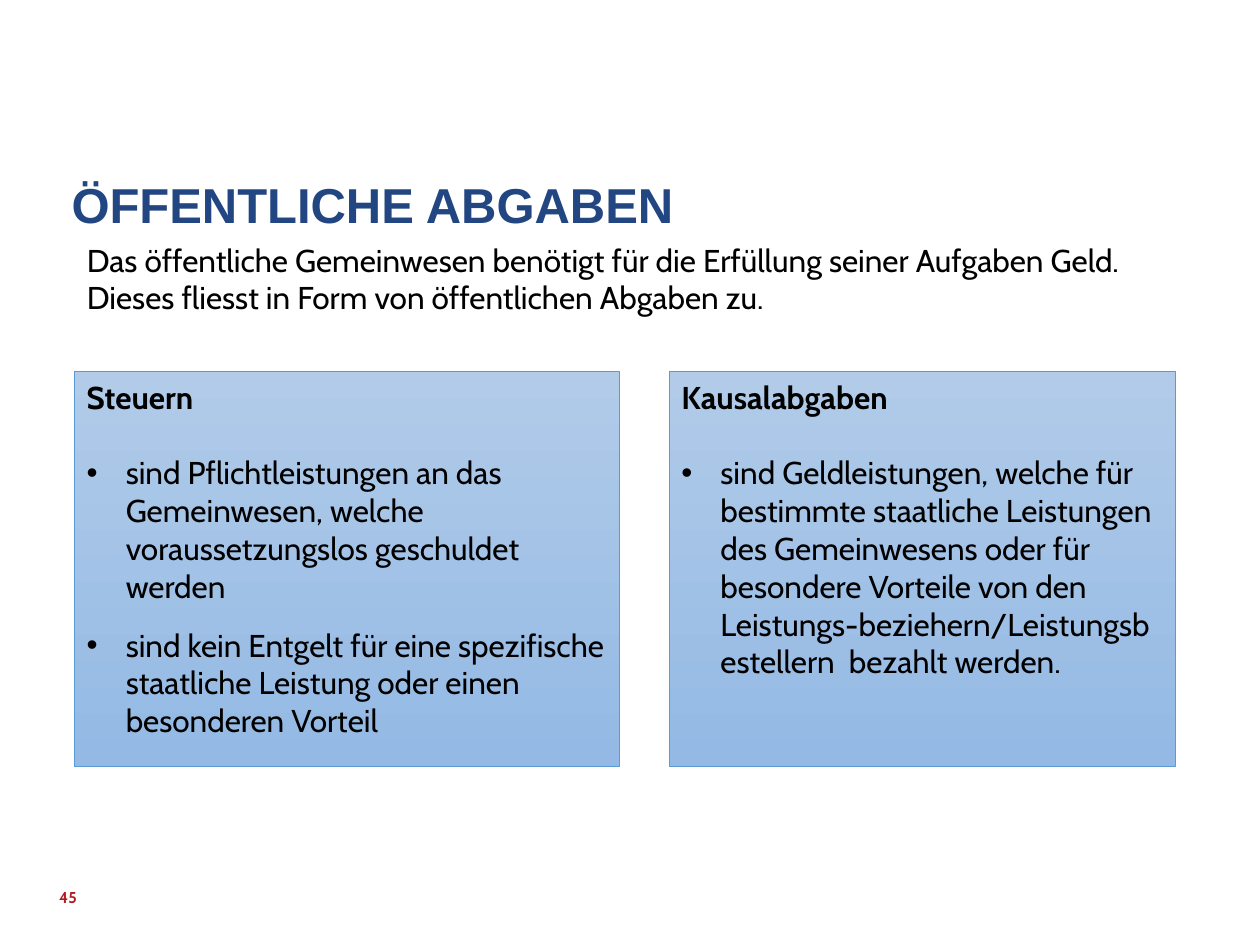
from dataclasses import dataclass

import pptx
import pptx.dml.color
import pptx.enum.shapes
import pptx.enum.text
import pptx.oxml.ns
import pptx.util
from lxml import etree

Inches = pptx.util.Inches
Pt = pptx.util.Pt

BODY_FONT = "Cabin"
BLACK = "000000"


@dataclass
class Panel:
    left: float
    width: float
    heading: str
    points: list[str]


def rgb(value: str) -> pptx.dml.color.RGBColor:
    return pptx.dml.color.RGBColor.from_string(value)


def add_run(paragraph, text: str, size: float = 18, color: str = BLACK,
            bold: bool = False, font: str = BODY_FONT) -> None:
    run = paragraph.add_run()
    run.text = text
    run.font.name = font
    run.font.size = Pt(size)
    run.font.bold = bold
    run.font.color.rgb = rgb(color)


def add_text_frame(slide, left: float, top: float, width: float, height: float):
    box = slide.shapes.add_textbox(Inches(left), Inches(top), Inches(width), Inches(height))
    box.text_frame.word_wrap = True
    return box.text_frame


def add_bullet(paragraph) -> None:
    properties = paragraph._p.get_or_add_pPr()
    properties.set("marL", str(Inches(0.31)))
    properties.set("indent", str(-Inches(0.31)))
    qn = pptx.oxml.ns.qn
    etree.SubElement(properties, qn("a:buFont"), typeface="Arial")
    etree.SubElement(properties, qn("a:buChar"), char="•")


def add_panel(slide, panel: Panel) -> None:
    box = slide.shapes.add_shape(
        pptx.enum.shapes.MSO_SHAPE.RECTANGLE,
        Inches(panel.left), Inches(2.95), Inches(panel.width), Inches(3.13))
    box.shadow.inherit = False
    box.line.color.rgb = rgb("5B9BD5")
    box.line.width = Pt(0.5)

    # Light blue at the top, darker at the bottom
    box.fill.gradient()
    box.fill.gradient_angle = 270
    for stop, color in zip(box.fill.gradient_stops, ("B1CBE9", "93B9E4")):
        stop.color.rgb = rgb(color)
        stop.position = 0 if color == "B1CBE9" else 1

    frame = box.text_frame
    frame.word_wrap = True
    frame.vertical_anchor = pptx.enum.text.MSO_ANCHOR.TOP
    heading = frame.paragraphs[0]
    heading.alignment = pptx.enum.text.PP_ALIGN.LEFT
    heading.space_after = Pt(21.6)
    add_run(heading, panel.heading, bold=True)
    for point in panel.points:
        item = frame.add_paragraph()
        item.alignment = pptx.enum.text.PP_ALIGN.LEFT
        item.space_after = Pt(12)
        add_bullet(item)
        add_run(item, point)


PANELS = [
    Panel(0.59, 4.33, "Steuern", [
        "sind Pflichtleistungen an das Gemeinwesen, welche "
        "voraussetzungslos geschuldet werden",
        "sind kein Entgelt für eine spezifische staatliche Leistung "
        "oder einen besonderen Vorteil",
    ]),
    Panel(5.31, 4.02, "Kausalabgaben", [
        "sind Geldleistungen, welche für bestimmte staatliche Leistungen "
        "des Gemeinwesens oder für besondere Vorteile von den "
        "Leistungs-beziehern/Leistungsbestellern  bezahlt werden.",
    ]),
]

INTRO = [
    "Das öffentliche Gemeinwesen benötigt für die Erfüllung seiner Aufgaben Geld.",
    "Dieses fliesst in Form von öffentlichen Abgaben zu.",
]


def main() -> None:
    deck = pptx.Presentation()
    deck.slide_width, deck.slide_height = Inches(10), Inches(7.5)
    slide = deck.slides.add_slide(deck.slide_layouts[6])

    # Title
    title = add_text_frame(slide, 0.47, 1.39, 7.64, 0.94).paragraphs[0]
    title.line_spacing = 0.9
    add_run(title, "ÖFFENTLICHE ABGABEN", 28, "224681", True, "Arial")

    # Slide number
    number_frame = add_text_frame(slide, 0.47, 6.92, 2.25, 0.4)
    number_frame.margin_left = number_frame.margin_right = 0
    number_frame.margin_top = number_frame.margin_bottom = 0
    number_frame.vertical_anchor = pptx.enum.text.MSO_ANCHOR.MIDDLE
    add_run(number_frame.paragraphs[0], "45", 9, "B21D24", True)

    # Introduction
    intro_frame = add_text_frame(slide, 0.59, 1.86, 8.92, 0.71)
    for index, sentence in enumerate(INTRO):
        paragraph = intro_frame.add_paragraph() if index else intro_frame.paragraphs[0]
        add_run(paragraph, sentence)

    # Two kinds of public charges
    for panel in PANELS:
        add_panel(slide, panel)

    deck.save("out.pptx")


if __name__ == "__main__":
    main()
